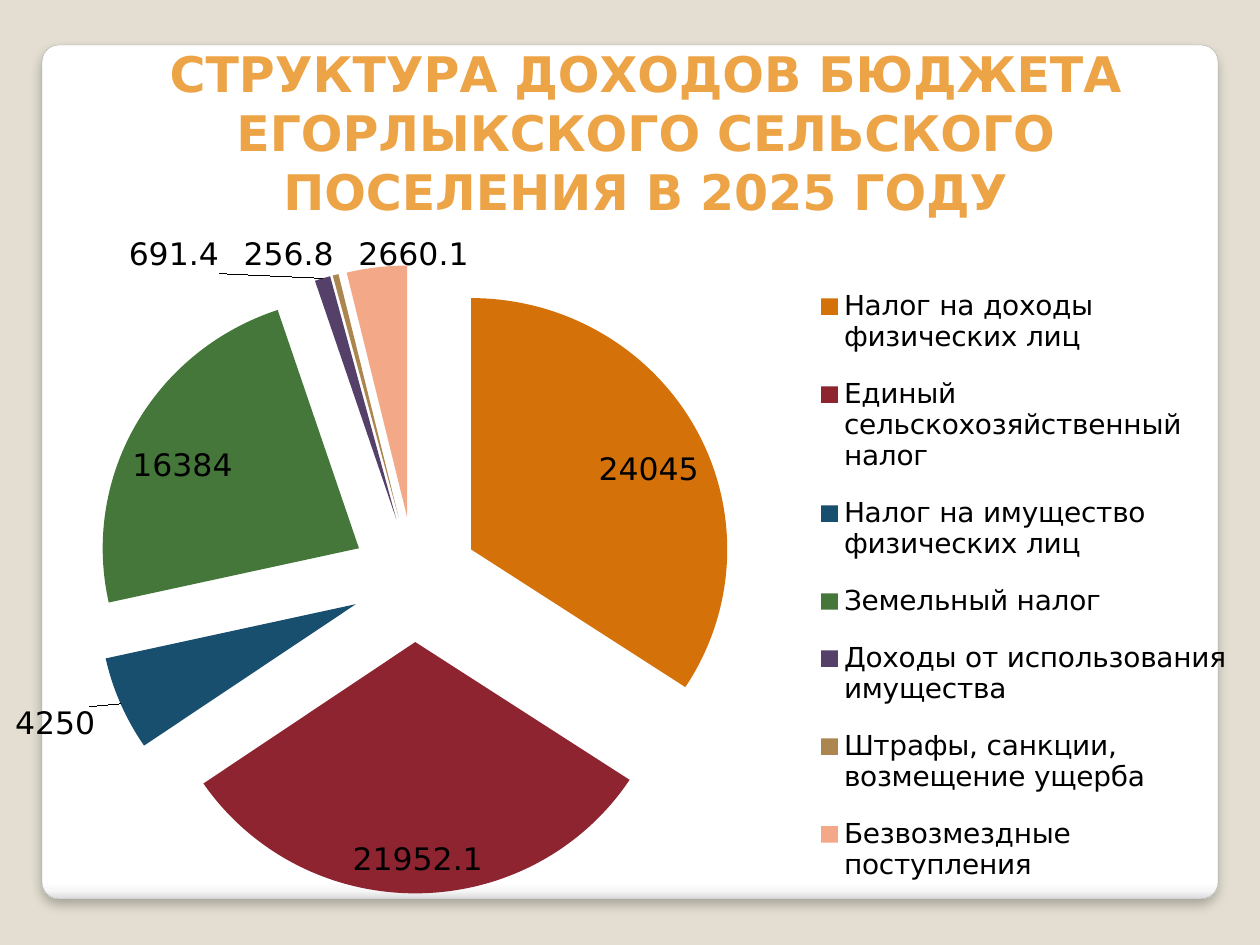
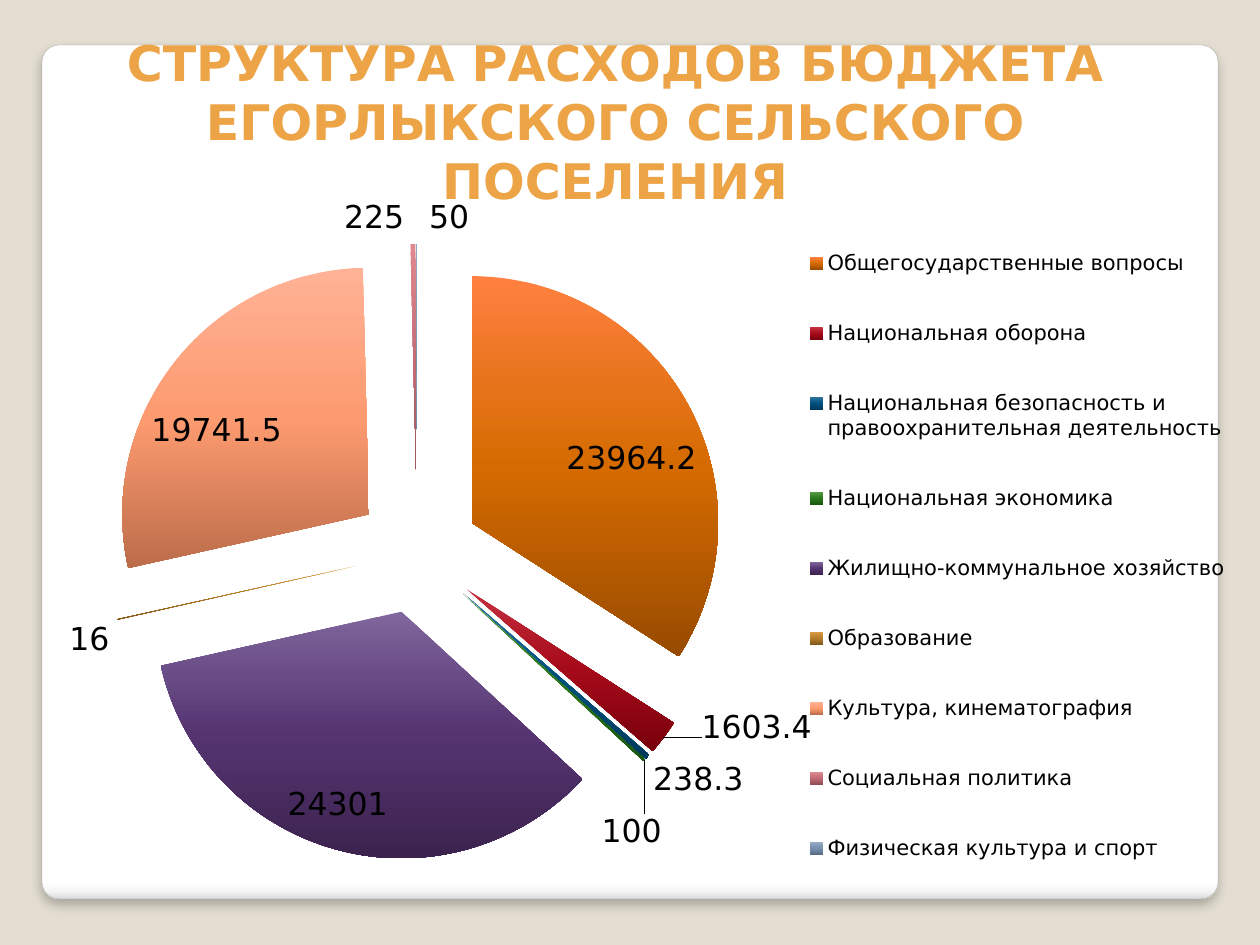
from dataclasses import dataclass

from lxml import etree
from pptx import Presentation
from pptx.chart.data import CategoryChartData
from pptx.dml.color import RGBColor
from pptx.enum.chart import XL_CHART_TYPE, XL_LABEL_POSITION, XL_LEGEND_POSITION
from pptx.enum.shapes import MSO_SHAPE
from pptx.enum.text import MSO_ANCHOR, PP_ALIGN
from pptx.oxml.ns import qn
from pptx.util import Pt

PIE = XL_CHART_TYPE.PIE
BEST_FIT = XL_LABEL_POSITION.BEST_FIT
LEGEND_RIGHT = XL_LEGEND_POSITION.RIGHT
ROUNDED = MSO_SHAPE.ROUNDED_RECTANGLE
CENTER = PP_ALIGN.CENTER
MIDDLE = MSO_ANCHOR.MIDDLE

EMU_PER_PX = 914400 / 126
BLANK_LAYOUT = 6
DOWNWARD = 270


@dataclass(frozen=True)
class Theme:
    font: str = "DejaVu Sans"
    background: str = "E3DED1"
    panel_stops: tuple = ((0, "FFFFFF"), (98, "FFFFFF"), (99, "F7F7F7"), (100, "DADADA"))
    panel_line: str = "A4A4A4"
    shadow: str = "000000"
    title: str = "ECA446"
    text: str = "000000"
    title_size: int = 28
    label_size: int = 18
    income_legend_size: int = 16
    expense_legend_size: int = 12


THEME = Theme()

# Category, value, slice colour
INCOME = [
    ("Налог на доходы физических лиц", 24045, "D57109"),
    ("Единый сельскохозяйственный налог", 21952.1, "8D2430"),
    ("Налог на имущество физических лиц", 4250, "184E6E"),
    ("Земельный налог", 16384, "45773A"),
    ("Доходы от использования имущества", 691.4, "55406A"),
    ("Штрафы, санкции, возмещение ущерба", 256.8, "AB874F"),
    ("Безвозмездные поступления", 2660.1, "F3A988"),
]

# Category, value, slice colours from top to bottom
EXPENSES = [
    ("Общегосударственные вопросы", 23964.2, ("FF8040", "D56B00", "984B00")),
    ("Национальная оборона", 1603.4, ("C5303F", "A50A1A", "78000C")),
    ("Национальная безопасность и правоохранительная деятельность", 238.3,
     ("2F739F", "00507F", "003A5D")),
    ("Национальная экономика", 100, ("559A47", "2A781C", "1B5511")),
    ("Жилищно-коммунальное хозяйство", 24301, ("80669D", "553470", "3B234E")),
    ("Образование", 16, ("D99B42", "B37D2C", "83591B")),
    ("Культура, кинематография", 19741.5, ("FFB295", "FD9B70", "BC6D4A")),
    ("Социальная политика", 225, ("E08890", "C26B74", "8F4D55")),
    ("Физическая культура и спорт", 50, ("94A9C3", "7690AE", "566C87")),
]


def px(length):
    return round(length * EMU_PER_PX)


def place(left, top, width, height):
    return px(left), px(top), px(width), px(height)


def rgb(value):
    return RGBColor.from_string(value)


def format_font(font, size, color=THEME.text, bold=False):
    font.name = THEME.font
    font.size = Pt(size)
    font.bold = bold
    font.color.rgb = rgb(color)


def fill_gradient(fill, owner, stops):
    """Fill from top to bottom; stops are (percent, colour) pairs."""
    fill.gradient()
    fill.gradient_angle = DOWNWARD
    stop_list = owner.xpath(".//a:gsLst")[0]
    for old_stop in list(stop_list):
        stop_list.remove(old_stop)
    for percent, color in stops:
        stop = etree.SubElement(stop_list, qn("a:gs"), pos=str(percent * 1000))
        etree.SubElement(stop, qn("a:srgbClr"), val=color)


def add_shadow(shape, blur, distance, opacity):
    shape.shadow.inherit = False
    effects = shape.element.xpath("./p:spPr/a:effectLst")[0]
    shadow = etree.SubElement(
        effects, qn("a:outerShdw"), blurRad=str(Pt(blur)), dist=str(Pt(distance)),
        dir="5400000", algn="tl", rotWithShape="0")
    color = etree.SubElement(shadow, qn("a:srgbClr"), val=THEME.shadow)
    etree.SubElement(color, qn("a:alpha"), val=str(opacity * 1000))


def add_text(slide, text, box, *, size, color, bold=False, align=CENTER):
    frame = slide.shapes.add_textbox(*place(*box)).text_frame
    frame.word_wrap = True
    frame.vertical_anchor = MIDDLE
    paragraph = frame.paragraphs[0]
    paragraph.alignment = align
    run = paragraph.add_run()
    run.text = text
    format_font(run.font, size, color, bold)


def add_panel(slide):
    panel = slide.shapes.add_shape(ROUNDED, *place(42, 45, 1176, 854))
    panel.adjustments[0] = 0.02
    fill_gradient(panel.fill, panel.element, THEME.panel_stops)
    panel.line.color.rgb = rgb(THEME.panel_line)
    panel.line.width = Pt(0.16)
    add_shadow(panel, blur=6, distance=4, opacity=25)


def chart_element(parent, tag, **attributes):
    return etree.SubElement(parent, qn(f"c:{tag}"), **attributes)


def manual_layout(**settings):
    layout = etree.Element(qn("c:layout"))
    manual = chart_element(layout, "manualLayout")
    for tag, value in settings.items():
        chart_element(manual, tag, val=str(value))
    return layout


def set_area(parent, index, area, **target):
    """Fix a chart part to (x, y, w, h), given as shares of the chart."""
    for old_layout in parent.findall(qn("c:layout")):
        parent.remove(old_layout)
    x, y, w, h = area
    parent.insert(index, manual_layout(**target, xMode="edge", yMode="edge", x=x, y=y, w=w, h=h))


def color_slice(chart, index, color):
    slice_format = chart.plots[0].series[0].points[index].format
    fill = slice_format.fill
    if isinstance(color, str):
        fill.solid()
        fill.fore_color.rgb = rgb(color)
    else:
        slice_element = chart.element.xpath(f".//c:dPt[c:idx/@val='{index}']")[0]
        fill_gradient(fill, slice_element, zip((0, 50, 100), color))
    slice_format.line.fill.background()


def shift_label(chart, index, x, y):
    """Move one slice label by shares of the chart size."""
    label = chart.plots[0].series[0].points[index].data_label
    format_font(label.font, THEME.label_size)
    label.position = BEST_FIT
    index_tag = chart.element.xpath(f".//c:dLbl/c:idx[@val='{index}']")[0]
    index_tag.addnext(manual_layout(x=x, y=y))


def add_budget_pie(slide, budget, box, *, plot_area, legend_area, legend_size):
    categories, values, colors = zip(*budget)
    data = CategoryChartData()
    data.categories = categories
    data.add_series("Series 1", values)
    chart = slide.shapes.add_chart(PIE, *place(*box), data).chart
    chart.has_title = False
    format_font(chart.font, THEME.label_size)

    chart.has_legend = True
    chart.legend.position = LEGEND_RIGHT
    chart.legend.include_in_layout = False
    format_font(chart.legend.font, legend_size)
    set_area(chart.element.xpath(".//c:legend")[0], 1, legend_area)
    set_area(chart.element.xpath(".//c:plotArea")[0], 0, plot_area, layoutTarget="inner")

    plot = chart.plots[0]
    plot.vary_by_categories = True
    explosion = etree.Element(qn("c:explosion"), val="25")
    chart.element.xpath(".//c:ser/c:tx")[0].addnext(explosion)
    for index, color in enumerate(colors):
        color_slice(chart, index, color)

    labels = plot.series[0].data_labels
    labels.show_value = True
    labels.position = BEST_FIT
    format_font(labels.font, THEME.label_size)
    return chart


def add_budget_slide(deck, title, title_box):
    slide = deck.slides.add_slide(deck.slide_layouts[BLANK_LAYOUT])
    slide.background.fill.solid()
    slide.background.fill.fore_color.rgb = rgb(THEME.background)
    add_panel(slide)
    add_text(slide, title, title_box, size=THEME.title_size, color=THEME.title, bold=True)
    return slide


def main():
    deck = Presentation()
    deck.slide_width, deck.slide_height = px(1260), px(945)

    income_slide = add_budget_slide(
        deck, "СТРУКТУРА ДОХОДОВ БЮДЖЕТА ЕГОРЛЫКСКОГО СЕЛЬСКОГО ПОСЕЛЕНИЯ В 2025 ГОДУ",
        (105, 37, 1081, 190))
    income_chart = add_budget_pie(
        income_slide, INCOME, (15, 224, 1230, 704), plot_area=(0.02, 0.04, 0.61, 0.91),
        legend_area=(0.65, 0.04, 0.34, 0.93), legend_size=THEME.income_legend_size)
    shift_label(income_chart, 2, x=-0.02, y=0)

    expense_slide = add_budget_slide(
        deck, "СТРУКТУРА РАСХОДОВ БЮДЖЕТА ЕГОРЛЫКСКОГО СЕЛЬСКОГО ПОСЕЛЕНИЯ",
        (44, 26, 1142, 190))
    add_budget_pie(
        expense_slide, EXPENSES, (5, 168, 1250, 761), plot_area=(0.06, 0.1, 0.54, 0.81),
        legend_area=(0.63, 0.05, 0.36, 0.92), legend_size=THEME.expense_legend_size)

    deck.save("out.pptx")


if __name__ == "__main__":
    main()
